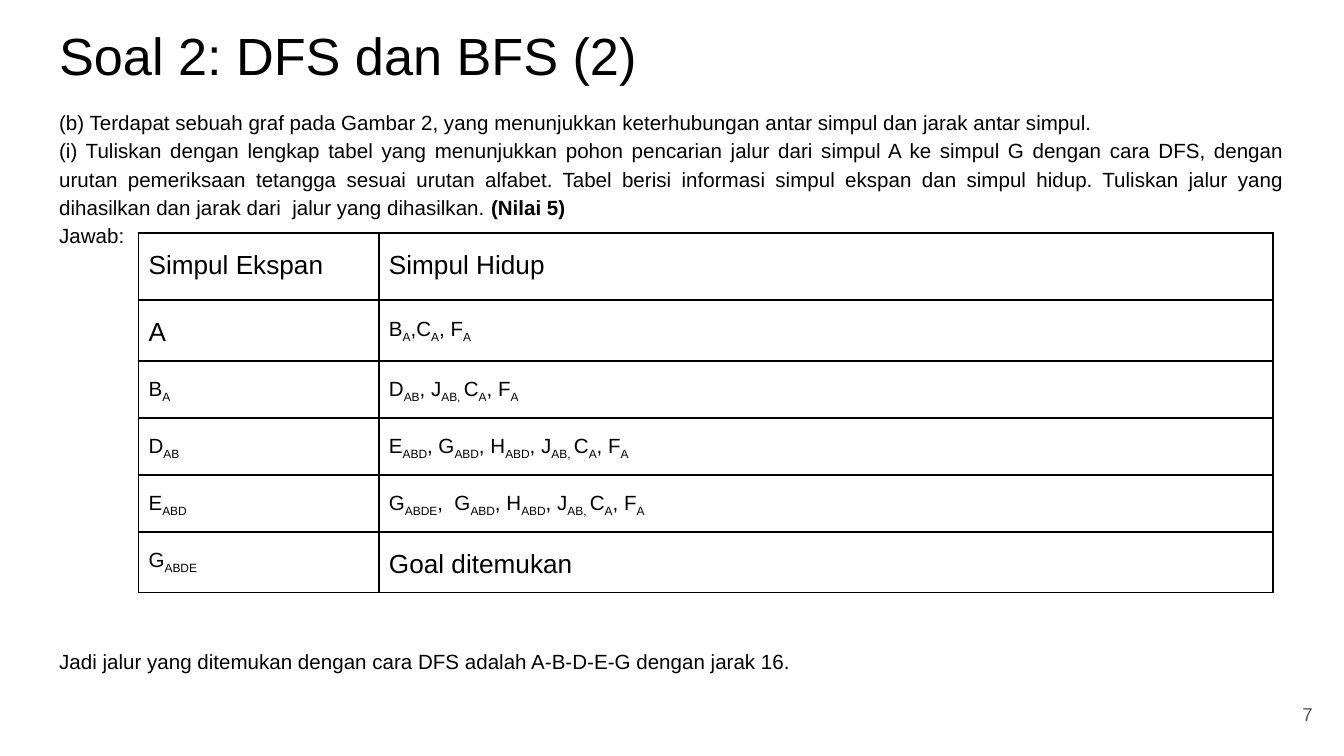
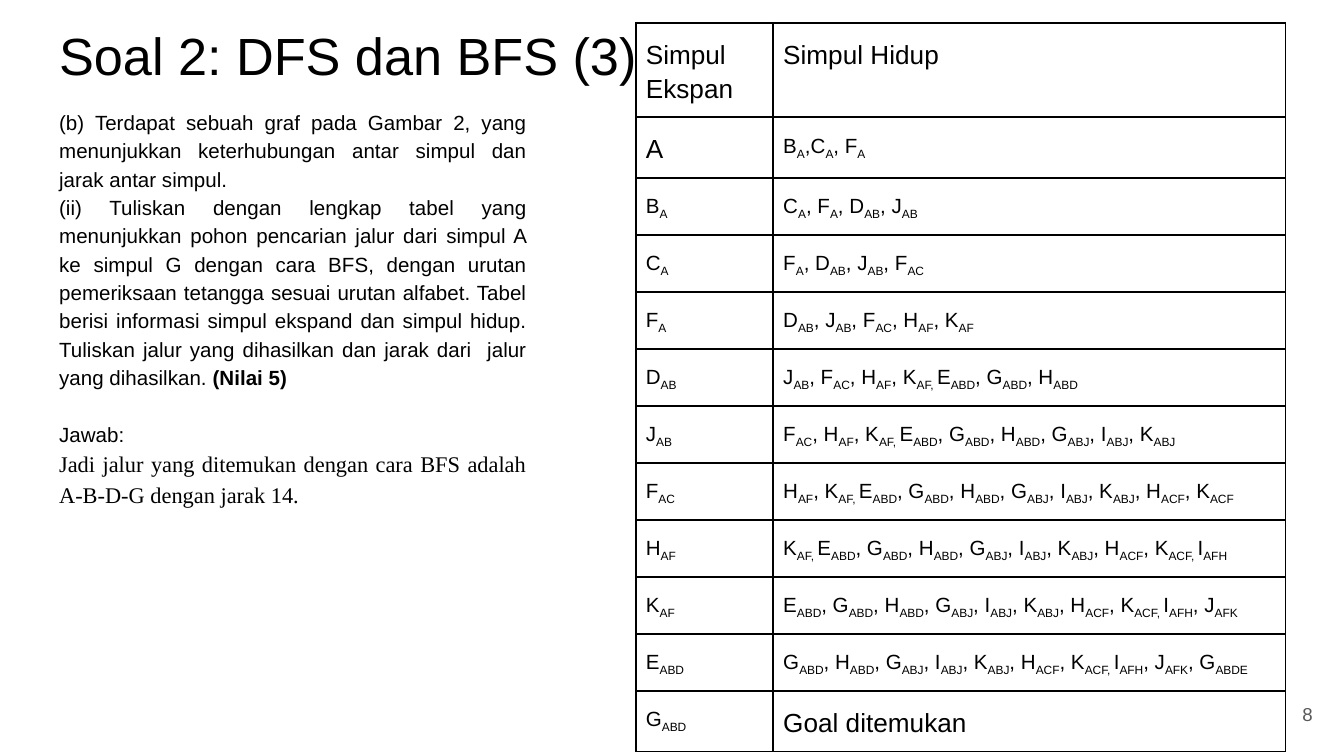
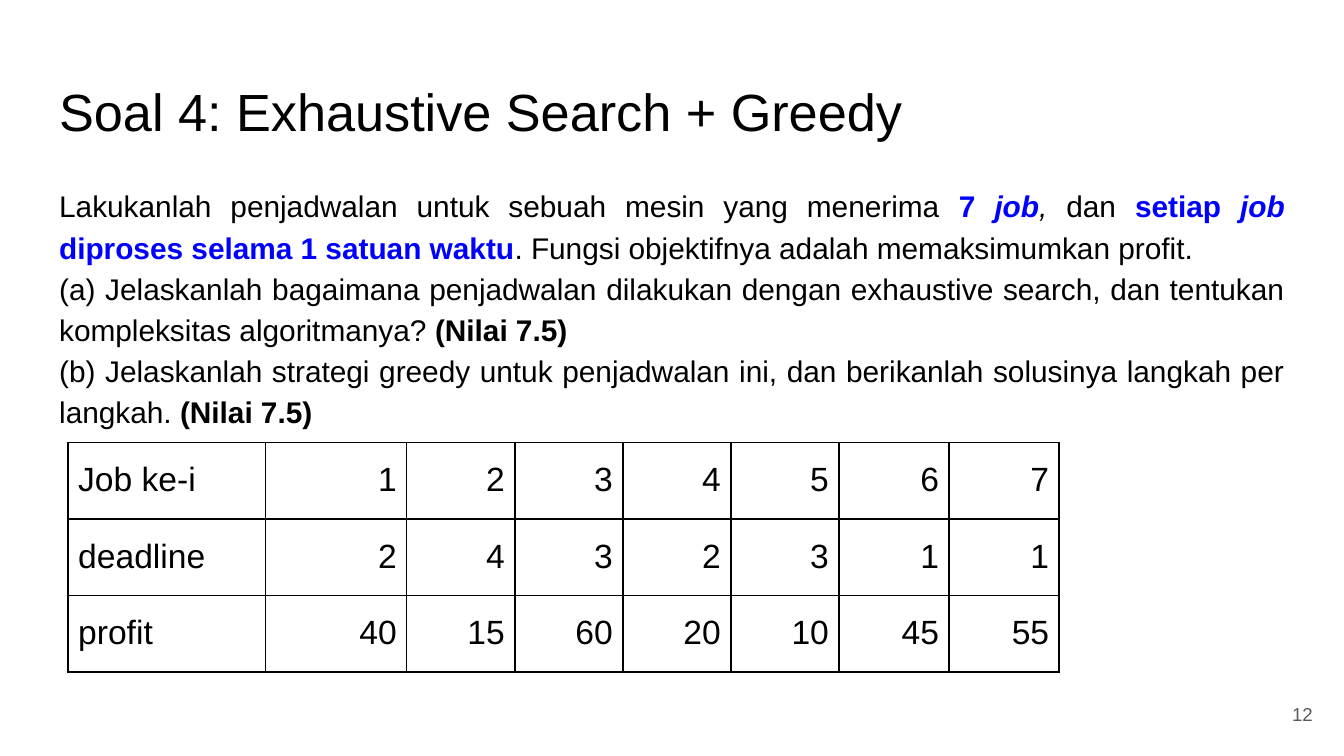
from lxml.etree import SubElement
from pptx import Presentation
from pptx.dml.color import RGBColor
from pptx.enum.text import MSO_ANCHOR, MSO_AUTO_SIZE, PP_ALIGN
from pptx.oxml.ns import qn
from pptx.util import Pt

BLACK, BLUE, GREY = "000000", "0000FF", "595959"
LINE = 15.2
LEFT, FULL_WIDTH = 24.5, 671

GRAPH = ("(b) Terdapat sebuah graf pada Gambar 2, yang menunjukkan keterhubungan "
         "antar simpul dan jarak antar simpul.")
TASK = ("({}) Tuliskan dengan lengkap tabel yang menunjukkan pohon pencarian jalur "
        "dari simpul A ke simpul G dengan cara {}, dengan urutan pemeriksaan tetangga "
        "sesuai urutan alfabet. Tabel berisi informasi simpul {} dan simpul hidup. "
        "Tuliskan jalur yang dihasilkan dan jarak dari  jalur yang dihasilkan. ")
RESULT = "Jadi jalur yang ditemukan dengan cara {} adalah {} dengan jarak {}."
HEADER = ("Simpul Ekspan", "Simpul Hidup")
GOAL = "Goal ditemukan"

DFS_ROWS = [
    HEADER,
    ("A", "B_A_,C_A_, F_A_"),
    ("B_A_", "D_AB_, J_AB, _C_A_, F_A_"),
    ("D_AB_", "E_ABD_, G_ABD_, H_ABD_, J_AB, _C_A_, F_A_"),
    ("E_ABD_", "G_ABDE_,  G_ABD_, H_ABD_, J_AB, _C_A_, F_A_"),
    ("G_ABDE_", GOAL),
]
BFS_ROWS = [
    HEADER,
    ("A", "B_A_,C_A_, F_A_"),
    ("B_A_", "C_A_, F_A_, D_AB_, J_AB_"),
    ("C_A_", "F_A_, D_AB_, J_AB_, F_AC_"),
    ("F_A_", "D_AB_, J_AB_, F_AC_, H_AF_, K_AF_"),
    ("D_AB_", "J_AB_, F_AC_, H_AF_, K_AF, _E_ABD_, G_ABD_, H_ABD_"),
    ("J_AB_", "F_AC_, H_AF_, K_AF, _E_ABD_, G_ABD_, H_ABD_, G_ABJ_, I_ABJ_, K_ABJ_"),
    ("F_AC_", "H_AF_, K_AF, _E_ABD_, G_ABD_, H_ABD_, G_ABJ_, I_ABJ_, K_ABJ_, H_ACF_, K_ACF_"),
    ("H_AF_", "K_AF, _E_ABD_, G_ABD_, H_ABD_, G_ABJ_, I_ABJ_, K_ABJ_, H_ACF_, K_ACF, _I_AFH_"),
    ("K_AF_", "E_ABD_, G_ABD_, H_ABD_, G_ABJ_, I_ABJ_, K_ABJ_, H_ACF_, K_ACF, _I_AFH_, J_AFK_"),
    ("E_ABD_", "G_ABD_, H_ABD_, G_ABJ_, I_ABJ_, K_ABJ_, H_ACF_, K_ACF, _I_AFH_, J_AFK_, G_ABDE_"),
    ("G_ABD_", GOAL),
]
JOB_ROWS = [
    ("Job ke-i", "1", "2", "3", "4", "5", "6", "7"),
    ("deadline", "2", "4", "3", "2", "3", "1", "1"),
    ("profit", "40", "15", "60", "20", "10", "45", "55"),
]


def rgb(color):
    """Turn a hex string into a colour."""
    return RGBColor.from_string(color)


def bold(text, **style):
    """Mark a run as bold."""
    return text, {"bold": True, **style}


def with_subscripts(text):
    """Split text into runs, lowering what stands between underscores."""
    return [(part, {"subscript": index % 2 == 1})
            for index, part in enumerate(text.split("_")) if part]


def write(frame, *runs, size=11, font="Arial", color=BLACK,
          align=PP_ALIGN.JUSTIFY, spacing=1.15, before=0):
    """Add one paragraph of plain or styled runs to a text frame."""
    paragraph = frame.paragraphs[0]
    if paragraph.runs:
        paragraph = frame.add_paragraph()
    properties = paragraph._p.get_or_add_pPr()
    properties.set("marL", "0")
    properties.set("indent", "0")
    SubElement(properties, qn("a:buNone"))
    paragraph.alignment = align
    paragraph.line_spacing = spacing
    paragraph.space_before = Pt(before)
    for item in runs:
        text, style = (item, {}) if isinstance(item, str) else item
        run = paragraph.add_run()
        run.text = text
        run.font.size = Pt(size)
        run.font.name = font
        run.font.bold = style.get("bold", False)
        run.font.italic = style.get("italic", False)
        run.font.color.rgb = rgb(style.get("color", color))
        if style.get("subscript"):
            run._r.get_or_add_rPr().set("baseline", "-25000")


class Deck:
    """Hold the shared style and the current slide."""

    def __init__(self):
        """Start a widescreen presentation."""
        self.presentation = Presentation()
        self.presentation.slide_width = Pt(720)
        self.presentation.slide_height = Pt(405)
        self.slide = None

    def place(self, shape, left, top, width, height, anchor=MSO_ANCHOR.TOP):
        """Position a text shape and return its prepared frame."""
        shape.left, shape.top = Pt(left), Pt(top)
        shape.width, shape.height = Pt(width), Pt(height)
        frame = shape.text_frame
        frame.word_wrap = True
        frame.auto_size = MSO_AUTO_SIZE.NONE
        frame.vertical_anchor = anchor
        frame.margin_left = frame.margin_right = Pt(7.2)
        frame.margin_top = frame.margin_bottom = Pt(7.2)
        return frame

    def start(self, title, number, top=5):
        """Add a slide with its title and page number."""
        layout = self.presentation.slide_layouts[1]
        self.slide = self.presentation.slides.add_slide(layout)
        frame = self.place(self.slide.shapes.title, LEFT, top, FULL_WIDTH, 45)
        write(frame, title, size=28, align=PP_ALIGN.LEFT, spacing=1)
        box = self.slide.shapes.add_textbox(0, 0, 0, 0)
        frame = self.place(box, 667.2, 367.2, 43.2, 31, MSO_ANCHOR.MIDDLE)
        write(frame, number, size=10, color=GREY, align=PP_ALIGN.RIGHT, spacing=1)

    def body(self, top=49.8, width=FULL_WIDTH, height=283):
        """Place the body placeholder and return its frame."""
        return self.place(self.slide.placeholders[1], LEFT, top, width, height)

    def table(self, rows, left, top, widths, heights, size=14, number_align=PP_ALIGN.JUSTIFY):
        """Add a ruled table whose subscripted cells use small text."""
        table = self.slide.shapes.add_table(
            len(rows), len(widths), Pt(left), Pt(top),
            Pt(sum(widths)), Pt(sum(heights))).table
        table.first_row = table.horz_banding = False
        for column, width in zip(table.columns, widths):
            column.width = Pt(width)
        for row, height, texts in zip(table.rows, heights, rows):
            row.height = Pt(height)
            for index, (cell, text) in enumerate(zip(row.cells, texts)):
                self.format_cell(cell)
                write(cell.text_frame, *with_subscripts(text),
                      size=11 if "_" in text else size,
                      align=number_align if index else PP_ALIGN.JUSTIFY)

    def format_cell(self, cell):
        """Give a cell its margins, black borders and no fill."""
        cell.margin_left = cell.margin_right = Pt(5.4)
        cell.margin_top = cell.margin_bottom = Pt(7.2)
        properties = cell._tc.get_or_add_tcPr()
        for side in ("lnL", "lnR", "lnT", "lnB"):
            line = SubElement(properties, qn(f"a:{side}"), w=str(Pt(1)))
            fill = SubElement(line, qn("a:solidFill"))
            SubElement(fill, qn("a:srgbClr"), val=BLACK)
        cell.fill.background()


def add_dfs_slide(deck):
    """Build the depth-first search answer."""
    deck.start("Soal 2: DFS dan BFS (2)", "7")
    frame = deck.body()
    write(frame, GRAPH)
    write(frame, TASK.format("i", "DFS", "ekspan"), bold("(Nilai 5)"))
    write(frame, "Jawab:")
    write(frame, RESULT.format("DFS", "A-B-D-E-G", 16), before=14 * LINE)
    deck.table(DFS_ROWS, 74.2, 124.8, [128.8, 479], [36, 29, 25.2, 25.2, 25.2, 29])


def add_bfs_slide(deck):
    """Build the breadth-first search answer."""
    deck.start("Soal 2: DFS dan BFS (3)", "8")
    frame = deck.body(width=265)
    write(frame, GRAPH)
    write(frame, TASK.format("ii", "BFS", "ekspand"), bold("(Nilai 5)"))
    write(frame, "Jawab:", before=LINE)
    write(frame, RESULT.format("BFS", "A-B-D-G", 14), size=12, font="Times New Roman")
    deck.table(BFS_ROWS, 340.6, 12.2, [73.6, 274.4], [45.4, 29] + [25.2] * 9 + [29])


def add_scheduling_slide(deck):
    """Build the job scheduling question."""
    deck.start("Soal 4: Exhaustive Search + Greedy", "12", top=35.2)
    frame = deck.body(top=90.7, height=269)
    write(frame, "Lakukanlah penjadwalan untuk sebuah mesin yang menerima ",
          bold("7 ", color=BLUE), bold("job", color=BLUE, italic=True),
          (",", {"italic": True}), " dan ",
          bold("setiap ", color=BLUE), bold("job", color=BLUE, italic=True),
          bold(" diproses selama 1 satuan waktu", color=BLUE),
          ". Fungsi objektifnya adalah memaksimumkan profit.", size=16)
    write(frame, "(a) Jelaskanlah bagaimana penjadwalan dilakukan dengan exhaustive "
          "search, dan tentukan kompleksitas algoritmanya? ", bold("(Nilai 7.5)"), size=16)
    write(frame, "(b) Jelaskanlah strategi greedy untuk penjadwalan ini, dan berikanlah "
          "solusinya langkah per langkah. ", bold("(Nilai 7.5)"), size=16)
    deck.table(JOB_ROWS, 36.5, 237, [105.8, 75.6] + [57.9] * 4 + [59] * 2,
               [41] * 3, size=18, number_align=PP_ALIGN.RIGHT)


def main():
    """Build and save the slides."""
    deck = Deck()
    add_dfs_slide(deck)
    add_bfs_slide(deck)
    add_scheduling_slide(deck)
    deck.presentation.save("out.pptx")


if __name__ == "__main__":
    main()
